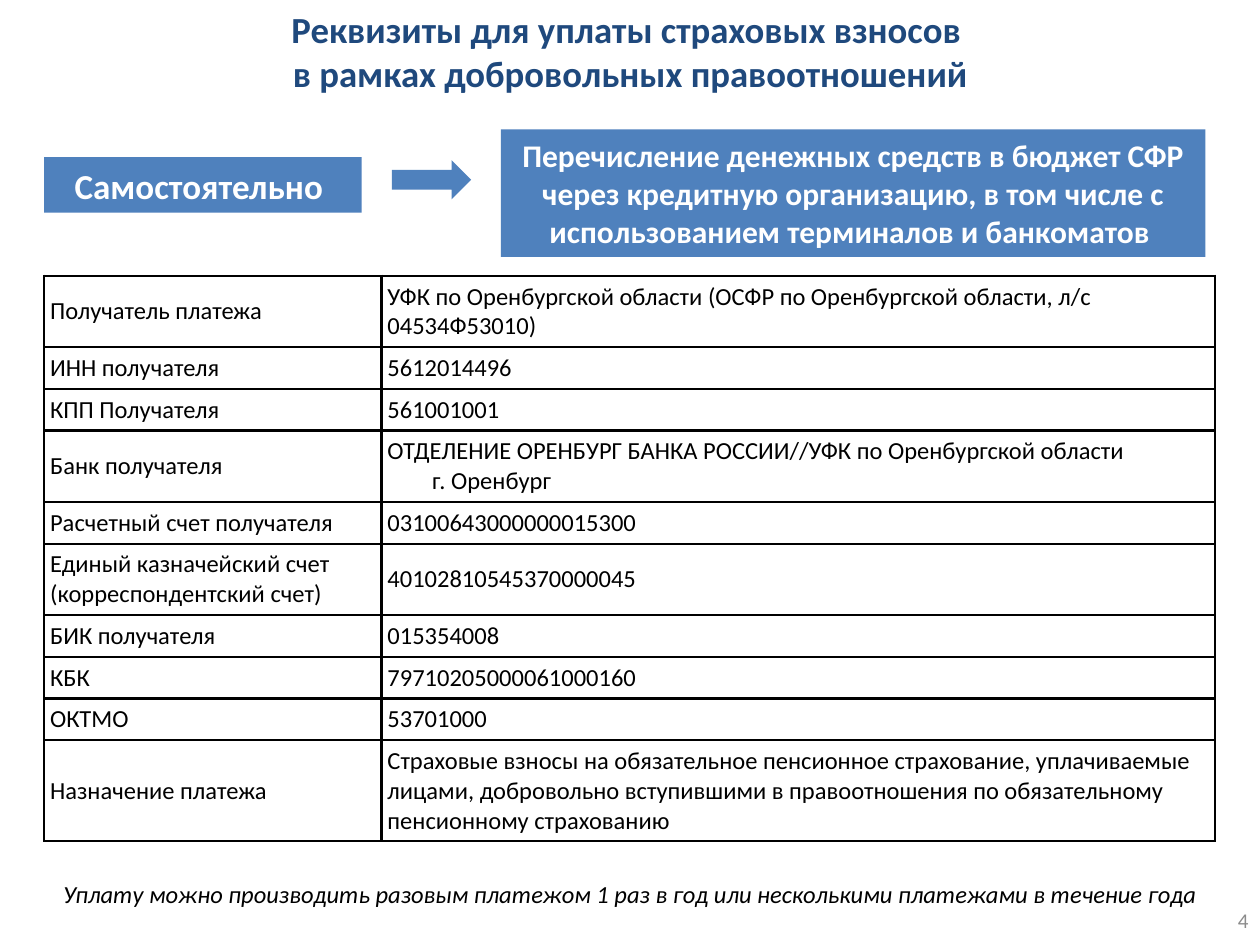
from dataclasses import dataclass

from lxml import etree
from pptx import Presentation
from pptx.dml.color import RGBColor
from pptx.enum.shapes import MSO_SHAPE
from pptx.enum.text import MSO_ANCHOR, PP_ALIGN
from pptx.oxml.ns import qn
from pptx.util import Cm, Pt

RECT, ARROW = MSO_SHAPE.RECTANGLE, MSO_SHAPE.RIGHT_ARROW
LEFT, CENTER, RIGHT = PP_ALIGN.LEFT, PP_ALIGN.CENTER, PP_ALIGN.RIGHT
MIDDLE = MSO_ANCHOR.MIDDLE

FONT = "Calibri"
NAVY, BLUE, WHITE, BLACK, GREY = "1F497D", "4F81BD", "FFFFFF", "000000", "8C8C8C"


@dataclass
class Box:
    """Position in cm, text and its look."""
    x: float
    y: float
    w: float
    h: float
    text: str = ""
    size: float = 14
    color: str = BLACK
    align: int = CENTER
    bold: bool = False
    italic: bool = False


@dataclass
class Row:
    label: str
    value: str
    lines: int = 1
    hanging: float = 0


TITLE = Box(0.71, 0.53, 24, 1, "Реквизиты для уплаты страховых взносов \n"
            "в рамках добровольных правоотношений", 21, NAVY, bold=True)
NOTE = Box(0.61, 17.58, 24.2, 0.86, "Уплату можно производить разовым платежом 1 раз в год "
           "или несколькими платежами в течение года", italic=True)
NUMBER = Box(19.5, 18.03, 5.92, 1.02, "4", 12, GREY, RIGHT)
METHOD = Box(0.89, 3.17, 6.4, 1.12, "Самостоятельно ", 20, WHITE, bold=True)
TRANSFER = Box(10.1, 2.61, 14.2, 2.57, "Перечисление денежных средств в бюджет СФР через "
               "кредитную организацию, в том числе с использованием терминалов и банкоматов ",
               18, WHITE, bold=True)
POINTER = Box(7.9, 3.23, 1.6, 0.79)

TABLE_X, TABLE_Y = 0.89, 5.56
COL_WIDTHS = (6.8, 16.8)
LINE_HEIGHT, CELL_MARGIN = 0.6, 0.12
ROWS = [
    Row("Получатель платежа",
        "УФК по Оренбургской области (ОСФР по Оренбургской области, л/с 04534Ф53010)", 2),
    Row("ИНН получателя", "5612014496"),
    Row("КПП Получателя", "561001001"),
    Row("Банк получателя",
        "ОТДЕЛЕНИЕ ОРЕНБУРГ БАНКА РОССИИ//УФК по Оренбургской области\vг. Оренбург", 2, 0.9),
    Row("Расчетный счет получателя", "03100643000000015300"),
    Row("Единый казначейский счет (корреспондентский счет)", "40102810545370000045", 2),
    Row("БИК получателя", "015354008"),
    Row("КБК", "79710205000061000160"),
    Row("ОКТМО", "53701000"),
    Row("Назначение платежа",
        "Страховые взносы на обязательное пенсионное страхование, уплачиваемые лицами, "
        "добровольно вступившими в правоотношения по обязательному пенсионному страхованию", 3),
]


def rgb(value: str) -> RGBColor:
    return RGBColor.from_string(value)


def write(tf, text: str, size: float, color: str, align: int,
          bold: bool = False, italic: bool = False) -> None:
    tf.text = text
    tf.word_wrap = True
    for p in tf.paragraphs:
        p.alignment = align
        for r in p.runs:
            f = r.font
            f.name, f.size, f.bold, f.italic = FONT, Pt(size), bold, italic
            f.color.rgb = rgb(color)


def place(box: Box) -> tuple:
    return Cm(box.x), Cm(box.y), Cm(box.w), Cm(box.h)


def fill_text(sp, box: Box) -> None:
    write(sp.text_frame, box.text, box.size, box.color, box.align, box.bold, box.italic)
    sp.text_frame.vertical_anchor = MIDDLE


def add_label(s, box: Box) -> None:
    fill_text(s.shapes.add_textbox(*place(box)), box)


def add_block(s, kind: int, box: Box) -> None:
    sp = s.shapes.add_shape(kind, *place(box))
    sp.shadow.inherit = False
    sp.fill.solid()
    sp.fill.fore_color.rgb = rgb(BLUE)
    sp.line.fill.background()
    if box.text:
        fill_text(sp, box)


def set_borders(cell, color: str, width: float) -> None:
    tc_pr = cell._tc.get_or_add_tcPr()
    for side in ("a:lnL", "a:lnR", "a:lnT", "a:lnB"):
        ln = etree.SubElement(tc_pr, qn(side), w=str(Pt(width)))
        solid = etree.SubElement(ln, qn("a:solidFill"))
        etree.SubElement(solid, qn("a:srgbClr"), val=color)


def format_cell(cell, text: str) -> None:
    write(cell.text_frame, text, 14, BLACK, LEFT)
    cell.vertical_anchor = MIDDLE
    cell.margin_left = cell.margin_right = Cm(CELL_MARGIN)
    cell.margin_top = cell.margin_bottom = Cm(CELL_MARGIN)
    set_borders(cell, BLACK, 1.5)
    cell.fill.background()


def add_details(s, rows: list[Row]) -> None:
    heights = [row.lines * LINE_HEIGHT + 2 * CELL_MARGIN for row in rows]
    table = s.shapes.add_table(len(rows), len(COL_WIDTHS), Cm(TABLE_X), Cm(TABLE_Y),
                               Cm(sum(COL_WIDTHS)), Cm(sum(heights))).table
    table.first_row = table.horz_banding = False
    for col, width in zip(table.columns, COL_WIDTHS):
        col.width = Cm(width)
    for i, (row, height) in enumerate(zip(rows, heights)):
        table.rows[i].height = Cm(height)
        format_cell(table.cell(i, 0), row.label)
        value = table.cell(i, 1)
        format_cell(value, row.value)
        if row.hanging:
            p_pr = value.text_frame.paragraphs[0]._p.get_or_add_pPr()
            p_pr.set("marL", str(Cm(row.hanging)))
            p_pr.set("indent", str(-Cm(row.hanging)))


def main() -> None:
    prs = Presentation()
    prs.slide_width, prs.slide_height = Cm(25.4), Cm(19.05)
    s = prs.slides.add_slide(prs.slide_layouts[6])

    # Title and payment method
    add_label(s, TITLE)
    add_block(s, RECT, METHOD)
    add_block(s, RECT, TRANSFER)
    add_block(s, ARROW, POINTER)

    # Payment details
    add_details(s, ROWS)

    # Footnote and slide number
    add_label(s, NOTE)
    add_label(s, NUMBER)

    prs.save("out.pptx")


if __name__ == "__main__":
    main()
